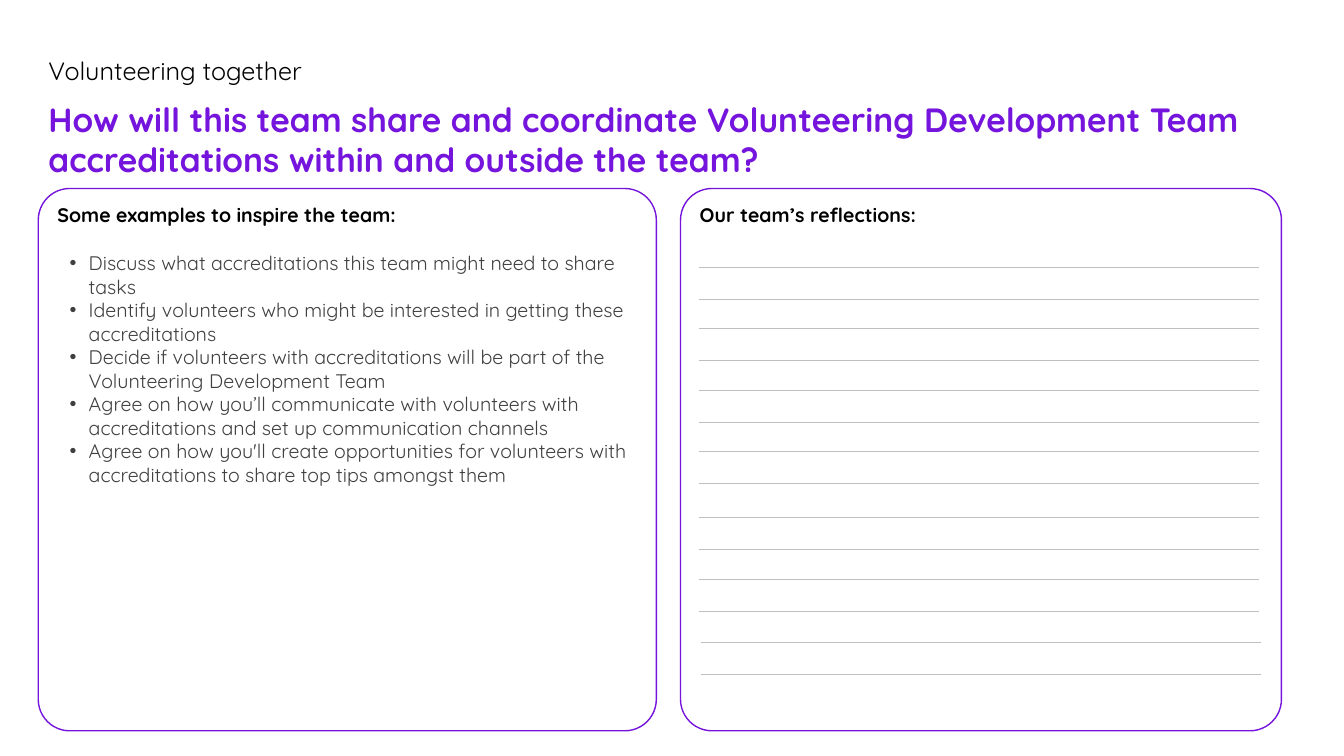
from dataclasses import dataclass

from lxml import etree
from pptx import Presentation
from pptx.dml.color import RGBColor
from pptx.enum.shapes import MSO_CONNECTOR, MSO_SHAPE
from pptx.enum.text import MSO_ANCHOR, MSO_AUTO_SIZE, PP_ALIGN
from pptx.oxml.ns import qn
from pptx.util import Inches, Pt

STRAIGHT = MSO_CONNECTOR.STRAIGHT
ROUND_RECT = MSO_SHAPE.ROUNDED_RECTANGLE
TOP = MSO_ANCHOR.TOP
NO_FIT = MSO_AUTO_SIZE.NONE
LEFT = PP_ALIGN.LEFT


@dataclass(frozen=True)
class Theme:
    font: str = "Quicksand"
    purple: str = "7414DC"
    black: str = "000000"
    body: str = "404040"
    rule: str = "BFBFBF"
    title_size: int = 24
    kicker_size: int = 18
    text_size: int = 14


THEME = Theme()

# Non-breaking spaces keep some word pairs on one line
EXAMPLES = [
    "Discuss what accreditations this team might need to share tasks",
    "Identify volunteers who might be interested in getting these accreditations",
    "Decide if volunteers with accreditations will be part of the Volunteering Development Team",
    "Agree on how you’ll communicate with volunteers with accreditations and set up communication channels",
    "Agree on how you'll create opportunities for volunteers with accreditations to share top tips amongst them",
]


def place(sp, x, y, w, h):
    sp.left, sp.top, sp.width, sp.height = (Inches(v) for v in (x, y, w, h))


def write(sp, paragraphs, size=THEME.text_size, color=THEME.black, bold=False,
          bullet=False, inset=None):
    tf = sp.text_frame
    tf.word_wrap = True
    tf.auto_size = NO_FIT
    tf.vertical_anchor = TOP
    if inset is not None:
        tf.margin_left = tf.margin_right = Inches(inset)
        tf.margin_top = tf.margin_bottom = Inches(inset)
    for i, text in enumerate(paragraphs):
        p = tf.paragraphs[0] if i == 0 else tf.add_paragraph()
        p.alignment = LEFT
        p.space_before = Pt(0)
        if bullet:
            pPr = p._p.get_or_add_pPr()
            pPr.set("marL", str(Inches(0.31)))
            pPr.set("indent", str(Inches(-0.19)))
            etree.SubElement(pPr, qn("a:buFont")).set("typeface", "Arial")
            etree.SubElement(pPr, qn("a:buChar")).set("char", "•")
        r = p.add_run()
        r.text = text
        r.font.name = THEME.font
        r.font.size = Pt(size)
        r.font.bold = bold
        r.font.color.rgb = RGBColor.from_string(color)


def add_header(slide, x, y, w, h):
    """Small heading above the main question."""
    kicker = slide.shapes.add_textbox(Inches(x + 0.1), Inches(y), Inches(8.02), Inches(0.3))
    write(kicker, ["Volunteering together"], size=THEME.kicker_size, inset=0)
    title = slide.shapes.title
    place(title, x, y + 0.38, w, h - 0.38)
    write(title, ["How will this team share and coordinate Volunteering Development Team "
                  "accreditations within and outside the team?"],
          size=THEME.title_size, color=THEME.purple, bold=True)


def add_card(slide, heading, x, y, w, h):
    """Outlined panel with its heading."""
    sp = slide.shapes.add_shape(ROUND_RECT, Inches(x), Inches(y), Inches(w), Inches(h))
    sp.adjustments[0] = 0.058
    sp.shadow.inherit = False
    sp.fill.background()
    sp.line.color.rgb = RGBColor.from_string(THEME.purple)
    sp.line.width = Pt(1)
    write(sp, [heading], bold=True)


def add_examples(slide, x, y, w, h):
    """Left panel with the bulleted examples."""
    add_card(slide, "Some examples to inspire the team:", x, y, w, h)
    body = slide.placeholders[1]
    place(body, x + 0.09, y + 0.57, w - 0.18, 2.6)
    write(body, EXAMPLES, color=THEME.body, bullet=True)


def add_rule(slide, x, y, w):
    line = slide.shapes.add_connector(STRAIGHT, Inches(x), Inches(y), Inches(x + w), Inches(y))
    line.line.color.rgb = RGBColor.from_string(THEME.rule)
    line.line.width = Pt(0.75)
    etree.SubElement(line._element.spPr, qn("a:effectLst"))


def add_reflections(slide, x, y, w, h):
    """Right panel with pairs of writing lines."""
    add_card(slide, "Our team’s reflections:", x, y, w, h)
    pairs = [(0.18, dy) for dy in (0.78, 1.39, 2.0, 2.61, 3.26, 3.88)] + [(0.2, 4.5)]
    for dx, dy in pairs:
        for gap in (0, 0.32):
            add_rule(slide, x + dx, y + dy + gap, 5.56)


def main():
    prs = Presentation()
    prs.slide_width, prs.slide_height = Inches(13.33), Inches(7.5)
    slide = prs.slides.add_slide(prs.slide_layouts[1])
    add_header(slide, 0.38, 0.55, 12.44, 1.29)
    add_examples(slide, 0.38, 1.87, 6.13, 5.38)
    add_reflections(slide, 6.75, 1.87, 5.96, 5.38)
    prs.save("out.pptx")


if __name__ == "__main__":
    main()
